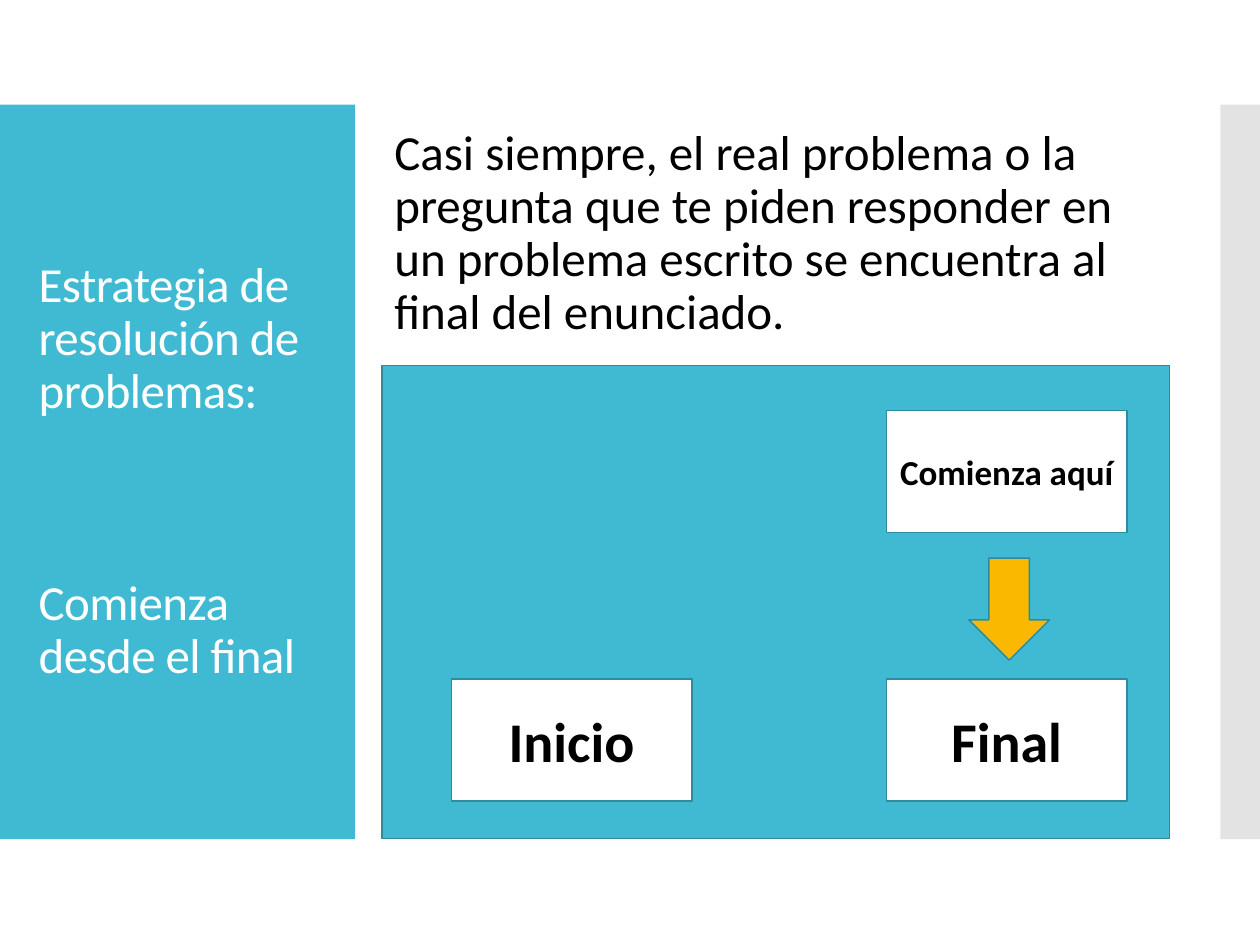
from lxml import etree
from pptx import Presentation
from pptx.dml.color import RGBColor
from pptx.enum.shapes import MSO_SHAPE
from pptx.enum.text import MSO_ANCHOR, PP_ALIGN
from pptx.oxml.ns import qn
from pptx.util import Cm, Pt

RECTANGLE, DOWN_ARROW = MSO_SHAPE.RECTANGLE, MSO_SHAPE.DOWN_ARROW
MIDDLE = MSO_ANCHOR.MIDDLE
LEFT, CENTER = PP_ALIGN.LEFT, PP_ALIGN.CENTER

TEAL = RGBColor(0x40, 0xBA, 0xD2)
DARK_TEAL = RGBColor(0x2F, 0x8A, 0x9B)
GRAY = RGBColor(0xC8, 0xC8, 0xC8)
AMBER = RGBColor(0xFA, 0xB9, 0x00)
WHITE = RGBColor(0xFF, 0xFF, 0xFF)
BLACK = RGBColor(0, 0, 0)


def add_filled_shape(kind, place, fill, outline=None):
    shape = page.shapes.add_shape(kind, *map(Cm, place))
    shape.shadow.inherit = False
    shape.fill.solid()
    shape.fill.fore_color.rgb = fill
    if outline is None:
        shape.line.fill.background()
    else:
        shape.line.color.rgb = outline
        shape.line.width = Pt(0.85)
    return shape


def write_paragraphs(box, texts, font_format, para_format):
    """Fill the box with vertically centred paragraphs and return their runs."""
    frame = box.text_frame
    frame.word_wrap = True
    frame.vertical_anchor = MIDDLE
    spans = []
    for index, text in enumerate(texts):
        para = frame.add_paragraph() if index else frame.paragraphs[0]
        for name, value in para_format.items():
            setattr(para, name, value)
        span = para.add_run()
        span.text = text
        span.font.name = "Calibri"
        span.font.color.rgb = BLACK
        for name, value in font_format.items():
            if name == "color":
                span.font.color.rgb = value
            else:
                setattr(span.font, name, value)
        spans.append(span)
    return spans


deck = Presentation()
deck.slide_width, deck.slide_height = Cm(25.4), Cm(19.05)
page = deck.slides.add_slide(deck.slide_layouts[6])

# Side bands
band_top, band_height = 2.11, 14.81
add_filled_shape(RECTANGLE, (0, band_top, 7.16, band_height), TEAL)
right_band = add_filled_shape(RECTANGLE, (24.6, band_top, 0.8, band_height), GRAY)
gray_color = right_band.fill._xPr.find(qn("a:solidFill"))[0]
etree.SubElement(gray_color, qn("a:alpha")).set("val", "50000")

# Title: two parts set apart by paragraph spacing
title = page.shapes.add_textbox(Cm(0.53), Cm(3.12), Cm(6.15), Cm(12.78))
title_spans = write_paragraphs(
    title,
    ["Estrategia de resolución de problemas:", "Comienza desde el final"],
    {"size": Pt(28), "color": WHITE},
    {"alignment": LEFT, "line_spacing": 0.9},
)
title.text_frame.paragraphs[1].space_before = Pt(91)
for span in title_spans:
    span.font._element.set("spc", "-30")

# Explanation
content_left, content_width = 7.7, 15.88
explanation = page.shapes.add_textbox(
    Cm(content_left), Cm(2.06), Cm(content_width), Cm(5.31)
)
write_paragraphs(
    explanation,
    ["Casi siempre, el real problema o la pregunta que te piden responder "
     "en un problema escrito se encuentra al final del enunciado."],
    {"size": Pt(28)},
    {"alignment": LEFT, "line_spacing": 0.9, "space_before": Pt(6.8)},
)

# Diagram
add_filled_shape(RECTANGLE, (content_left, 7.37, content_width, 9.53), TEAL, DARK_TEAL)
start_left, end_left = 9.1, 17.87
upper_top, lower_top = 8.28, 13.69
for label, left, top, size in (
    ("Inicio", start_left, lower_top, 32),
    ("Final", end_left, lower_top, 32),
    ("Comienza aquí", end_left, upper_top, 20),
):
    card = add_filled_shape(RECTANGLE, (left, top, 4.85, 2.46), WHITE, DARK_TEAL)
    write_paragraphs(
        card, [label], {"size": Pt(size), "bold": True}, {"alignment": CENTER}
    )
add_filled_shape(DOWN_ARROW, (19.53, 11.25, 1.63, 2.06), AMBER, DARK_TEAL)

deck.save("out.pptx")
